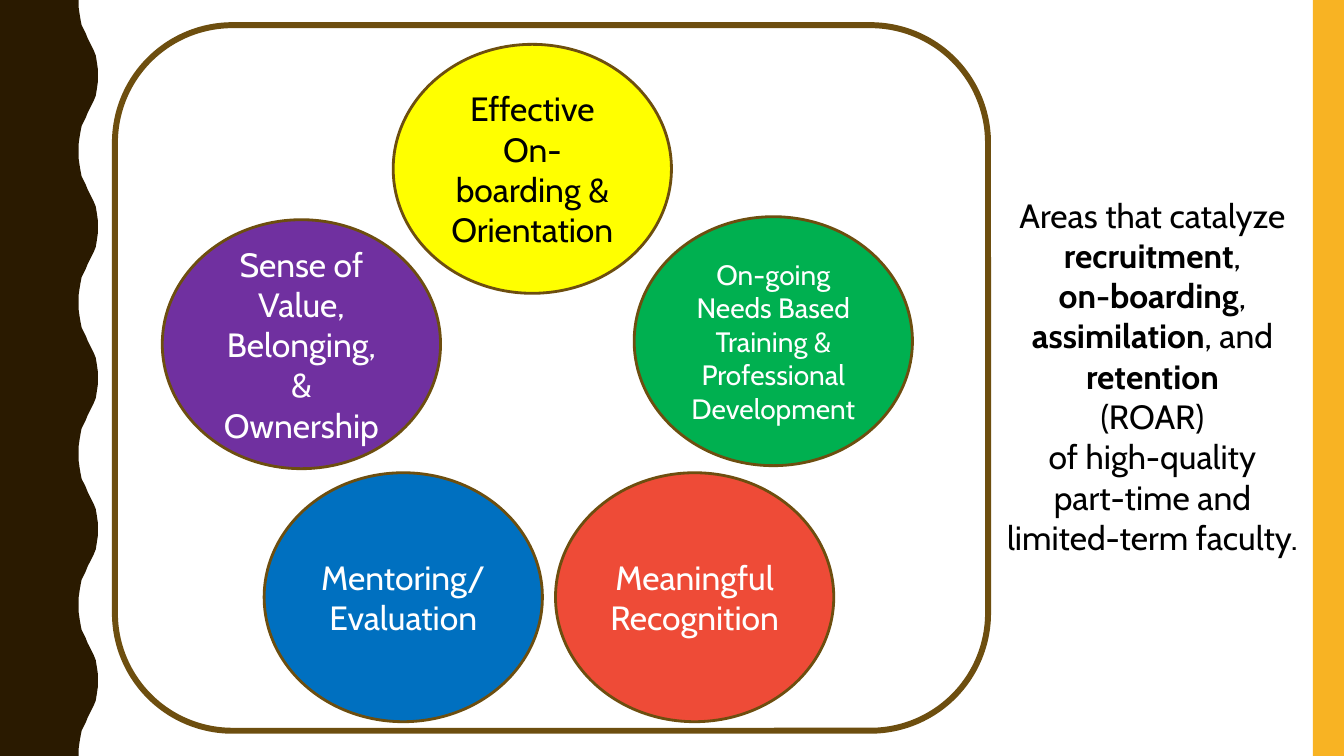
from dataclasses import dataclass

from pptx import Presentation
from pptx.dml.color import RGBColor
from pptx.enum.shapes import MSO_SHAPE
from pptx.enum.text import MSO_ANCHOR, MSO_AUTO_SIZE, PP_ALIGN
from pptx.util import Inches, Pt

OVAL, RECTANGLE, ROUNDED = MSO_SHAPE.OVAL, MSO_SHAPE.RECTANGLE, MSO_SHAPE.ROUNDED_RECTANGLE
MIDDLE, CENTER = MSO_ANCHOR.MIDDLE, PP_ALIGN.CENTER
FIT_SHAPE = MSO_AUTO_SIZE.SHAPE_TO_FIT_TEXT


@dataclass(frozen=True)
class Theme:
    font: str = "Cabin"
    body: int = 24
    small: int = 20
    black: str = "000000"
    white: str = "FFFFFF"
    dark_brown: str = "2A1A00"
    outline: str = "6D4E0F"
    amber: str = "F8B323"
    yellow: str = "FFFF00"
    purple: str = "7030A0"
    green: str = "00B050"
    blue: str = "0070C0"
    red: str = "EE4B37"


THEME = Theme()


def paint(shape, fill=None, line=None, width=0):
    shape.shadow.inherit = False
    if fill:
        shape.fill.solid()
        shape.fill.fore_color.rgb = RGBColor.from_string(fill)
    else:
        shape.fill.background()
    if line:
        shape.line.color.rgb = RGBColor.from_string(line)
        shape.line.width = Pt(width)
    else:
        shape.line.fill.background()


def write(shape, text, size=THEME.body, color=THEME.black):
    """Fill a shape with centred paragraphs, one per line; *stars* mark bold words."""
    frame = shape.text_frame
    frame.word_wrap = True
    for index, line in enumerate(text.split("\n")):
        paragraph = frame.paragraphs[0] if index == 0 else frame.add_paragraph()
        paragraph.alignment = CENTER
        for part, words in enumerate(line.split("*")):
            if words:
                run = paragraph.add_run()
                run.text = words
                run.font.name = THEME.font
                run.font.size = Pt(size)
                run.font.bold = part % 2 == 1
                run.font.color.rgb = RGBColor.from_string(color)


deck = Presentation()
deck.slide_width, deck.slide_height = Inches(13.33), Inches(7.5)
slide = deck.slides.add_slide(deck.slide_layouts[6])
shapes = slide.shapes

# Wavy left edge: five equal waves, each a swell out and its mirror back
WAVE_HEIGHT = 1.5
swell = [(0.78, 0), (0.78, 0.07), (0.79, 0.14), (0.8, 0.2), (0.81, 0.25),
         (0.83, 0.29), (0.85, 0.33), (0.87, 0.38), (0.89, 0.42), (0.91, 0.46),
         (0.93, 0.5), (0.95, 0.55), (0.96, 0.61), (0.97, 0.68), (0.97, 0.75)]
wave = swell + [(x, WAVE_HEIGHT - y) for x, y in reversed(swell[:-1])]
edge = [(Inches(x), Inches(y + number * WAVE_HEIGHT))
        for number in range(5) for x, y in wave]
builder = shapes.build_freeform(0, 0)
builder.add_line_segments(edge + [(0, Inches(7.5))], close=True)
paint(builder.convert_to_shape(), THEME.dark_brown)

side_bar = shapes.add_shape(RECTANGLE, Inches(13.02), 0, Inches(0.31), Inches(7.5))
paint(side_bar, THEME.amber)

frame_box = shapes.add_shape(ROUNDED, Inches(1.14), Inches(0.25), Inches(8.66), Inches(7))
paint(frame_box, line=THEME.outline, width=4.25)

areas = [
    (3.9, 0.44, THEME.yellow, THEME.black, THEME.body, "Effective On-boarding & Orientation"),
    (1.61, 2.18, THEME.purple, THEME.white, THEME.body, "Sense of Value, Belonging, & Ownership"),
    (6.29, 2.15, THEME.green, THEME.white, THEME.small,
     "On-going Needs Based Training & Professional Development"),
    (2.62, 4.69, THEME.blue, THEME.white, THEME.body, "Mentoring/\nEvaluation"),
    (5.51, 4.69, THEME.red, THEME.white, THEME.body, "Meaningful Recognition"),
]
for left, top, fill, color, size, label in areas:
    area = shapes.add_shape(OVAL, Inches(left), Inches(top), Inches(2.76), Inches(2.47))
    paint(area, fill, THEME.outline, 2)
    area.text_frame.vertical_anchor = MIDDLE
    write(area, label, size=size, color=color)

summary = shapes.add_textbox(Inches(9.75), Inches(1.88), Inches(3.36), Inches(3.74))
write(summary, """Areas that catalyze *recruitment*,
*on-boarding*, *assimilation*, and *retention*
(ROAR)
of high-quality
part-time and
limited-term faculty.""")
summary.text_frame.auto_size = FIT_SHAPE

deck.save("out.pptx")
